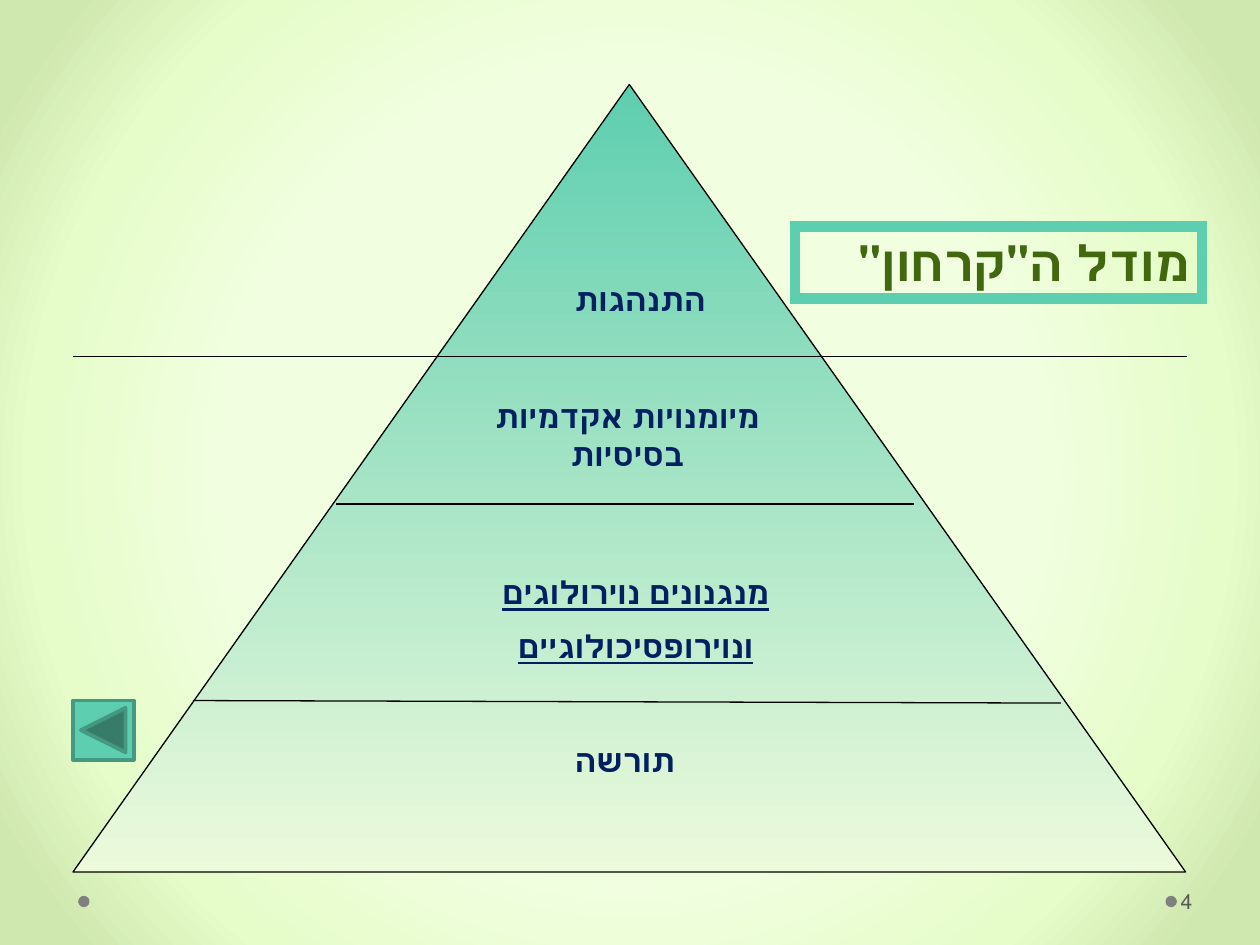
from dataclasses import dataclass

import lxml.etree
import pptx
import pptx.dml.color
import pptx.enum.shapes
import pptx.enum.text
import pptx.oxml
import pptx.oxml.ns
import pptx.util

Inches = pptx.util.Inches
Pt = pptx.util.Pt
RGB = pptx.dml.color.RGBColor.from_string
Shape = pptx.enum.shapes.MSO_SHAPE
Align = pptx.enum.text.PP_ALIGN
qn = pptx.oxml.ns.qn


@dataclass(frozen=True)
class Theme:
    teal: str = "5DCEAF"
    teal_dark: str = "459881"
    pale: str = "EDFADC"
    navy: str = "002060"
    olive: str = "41670F"
    black: str = "000000"
    dot: str = "808080"
    number: str = "595959"
    background: tuple = ((50, "F1FFE0"), (76, "E6FCC9"), (92, "CFE8AF"))
    label_font: str = "Arial"
    title_font: str = "Times New Roman"
    body_font: str = "League Spartan"
    label_size: int = 18
    title_size: int = 28
    number_size: int = 12
    thin: float = 0.75
    button_line: float = 2.25
    frame: float = 6


@dataclass(frozen=True)
class Box:
    left: float
    top: float
    width: float
    height: float

    def emu(self) -> tuple:
        return tuple(Inches(v) for v in (self.left, self.top, self.width, self.height))


@dataclass(frozen=True)
class TextStyle:
    font: str
    size: int
    color: str
    bold: bool = True
    underline: bool = False
    align: Align = Align.CENTER
    spaced: bool = True


@dataclass(frozen=True)
class Label:
    box: Box
    lines: tuple
    underline: bool = False


@dataclass(frozen=True)
class Divider:
    start: tuple
    end: tuple


THEME = Theme()
LABELS = (
    Label(Box(3.42, 5.83, 3.08, 0.4), ("תורשה",)),
    Label(Box(3.42, 4.5, 3.25, 0.86), ("מנגנונים נוירולוגים", "ונוירופסיכולוגיים"), True),
    Label(Box(3.68, 3.1, 2.6, 0.71), ("מיומנויות אקדמיות בסיסיות",)),
    Label(Box(4.33, 2.17, 1.5, 0.4), ("התנהגות",)),
)
DIVIDERS = (
    Divider((1.53, 5.56), (8.42, 5.58)),
    Divider((2.67, 4), (7.25, 4)),
    Divider((0.58, 2.83), (9.42, 2.83)),
)
DOT_LEFTS = (9.25, 0.62)


def paint_background(s) -> None:
    s.background.fill.gradient()
    grad = s.background._cSld.find(".//" + qn("a:gradFill"))
    for child in list(grad):
        grad.remove(child)
    stops = lxml.etree.SubElement(grad, qn("a:gsLst"))
    for position, color in THEME.background:
        stop = lxml.etree.SubElement(stops, qn("a:gs"), pos=str(position * 1000))
        lxml.etree.SubElement(stop, qn("a:srgbClr"), val=color)
    circle = lxml.etree.SubElement(grad, qn("a:path"), path="circle")
    sides = {side: "50000" for side in "ltrb"}
    lxml.etree.SubElement(circle, qn("a:fillToRect"), **sides)


def add_shape(s, kind: Shape, box: Box, fill: str = "", line: str = "", width: float = 0):
    sp = s.shapes.add_shape(kind, *box.emu())
    sp.shadow.inherit = False
    if fill:
        sp.fill.solid()
        sp.fill.fore_color.rgb = RGB(fill)
    else:
        sp.fill.background()
    if line:
        sp.line.color.rgb = RGB(line)
        sp.line.width = Pt(width)
    else:
        sp.line.fill.background()
    return sp


def write_lines(sp, lines: tuple, style: TextStyle) -> None:
    tf = sp.text_frame
    tf.word_wrap = True
    for i, text in enumerate(lines):
        p = tf.paragraphs[0] if i == 0 else tf.add_paragraph()
        p.alignment = style.align
        p._p.get_or_add_pPr().set("rtl", "1")
        if style.spaced:
            p.space_before = Pt(style.size / 2)
        r = p.add_run()
        r.text = text
        r.font.name = style.font
        r.font.size = Pt(style.size)
        r.font.bold = style.bold
        r.font.underline = style.underline
        r.font.color.rgb = RGB(style.color)


def add_pyramid(s) -> None:
    sp = add_shape(s, Shape.ISOSCELES_TRIANGLE, Box(0.58, 0.67, 8.83, 6.25),
                   line=THEME.black, width=THEME.thin)
    sp.fill.gradient()
    sp.fill.gradient_angle = 270
    for stop, color, position in zip(sp.fill.gradient_stops, (THEME.teal, THEME.pale), (0, 1)):
        stop.color.rgb = RGB(color)
        stop.position = position


def add_label(s, label: Label) -> None:
    sp = s.shapes.add_textbox(*label.box.emu())
    write_lines(sp, label.lines, TextStyle(THEME.label_font, THEME.label_size, THEME.navy,
                                           underline=label.underline))
    sp.text_frame.auto_size = pptx.enum.text.MSO_AUTO_SIZE.SHAPE_TO_FIT_TEXT


def add_divider(s, divider: Divider) -> None:
    ends = (Inches(v) for v in divider.start + divider.end)
    line = s.shapes.add_connector(pptx.enum.shapes.MSO_CONNECTOR.STRAIGHT, *ends)
    line.line.color.rgb = RGB(THEME.black)
    line.line.width = Pt(THEME.thin)
    lxml.etree.SubElement(line._element.spPr, qn("a:effectLst"))


def add_title(s) -> None:
    sp = add_shape(s, Shape.RECTANGLE, Box(6.31, 1.8, 3.23, 0.57),
                   line=THEME.teal, width=THEME.frame)
    lxml.etree.SubElement(sp._element.spPr.find(qn("a:ln")), qn("a:miter"), lim="800000")
    write_lines(sp, ('מודל ה"קרחון"',), TextStyle(THEME.title_font, THEME.title_size,
                                                  THEME.olive, align=Align.RIGHT))
    sp.text_frame.vertical_anchor = pptx.enum.text.MSO_ANCHOR.TOP
    sp.text_frame.auto_size = pptx.enum.text.MSO_AUTO_SIZE.SHAPE_TO_FIT_TEXT


def add_page_number(s) -> None:
    sp = s.shapes.add_textbox(*Box(9.34, 6.95, 0.61, 0.4).emu())
    tf = sp.text_frame
    tf.margin_left = Inches(0.03)
    tf.margin_top = tf.margin_right = tf.margin_bottom = Inches(0.05)
    tf.vertical_anchor = pptx.enum.text.MSO_ANCHOR.MIDDLE
    write_lines(sp, ("4",), TextStyle(THEME.body_font, THEME.number_size, THEME.number,
                                      bold=False, align=Align.LEFT, spaced=False))


def main() -> None:
    prs = pptx.Presentation()
    prs.slide_width, prs.slide_height = Inches(10), Inches(7.5)
    s = prs.slides.add_slide(prs.slide_layouts[6])
    paint_background(s)
    for left in DOT_LEFTS:
        add_shape(s, Shape.OVAL, Box(left, 7.11, 0.09, 0.09), THEME.dot)
    add_pyramid(s)
    for label in LABELS:
        add_label(s, label)
    for divider in DIVIDERS:
        add_divider(s, divider)
    add_title(s)
    add_page_number(s)
    add_shape(s, Shape.ACTION_BUTTON_BACK_OR_PREVIOUS, Box(0.58, 5.56, 0.48, 0.47),
              THEME.teal, THEME.teal_dark, THEME.button_line)
    prs.save("out.pptx")


if __name__ == "__main__":
    main()
